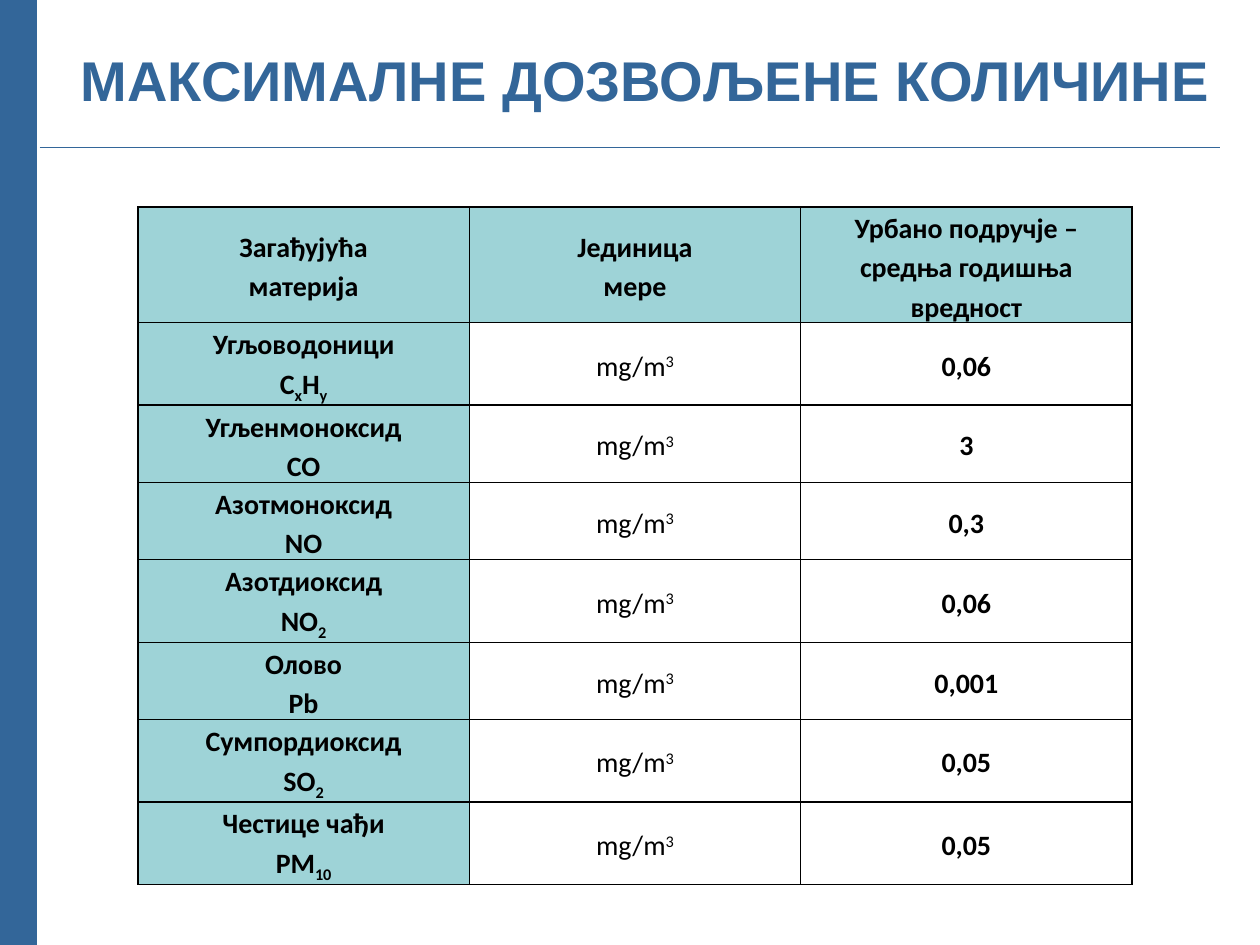
from lxml.etree import SubElement
from pptx import Presentation
from pptx.dml.color import RGBColor
from pptx.enum.text import MSO_ANCHOR, PP_ALIGN
from pptx.oxml.ns import qn
from pptx.util import Cm, Pt

BLUE = RGBColor(0x33, 0x66, 0x99)
TEAL = RGBColor(0x9E, 0xD3, 0xD7)
BLACK = RGBColor(0, 0, 0)

TITLE_FONT = {"name": "Arial", "size": Pt(32), "bold": True}
BOLD_FONT = {"name": "Calibri", "size": Pt(16), "bold": True}
UNIT_FONT = {**BOLD_FONT, "bold": False}
CELL_FORMAT = {
    "vertical_anchor": MSO_ANCHOR.MIDDLE,
    "margin_left": Cm(0.18),
    "margin_right": Cm(0.18),
    "margin_top": 0,
    "margin_bottom": 0,
}
SUBSCRIPT, SUPERSCRIPT = "-25000", "30000"

HEADERS = [
    [["Загађујућа"], ["материја"]],
    [["Јединица"], ["мере"]],
    [["Урбано подручје – средња годишња вредност"]],
]
UNIT = ["mg/m", "3"]
POLLUTANTS = [
    ("Угљоводоници", ["C", "x", "H", "y"], "0,06"),
    ("Угљенмоноксид", ["CO"], "3"),
    ("Азотмоноксид", ["NO"], "0,3"),
    ("Азотдиоксид", ["NO", "2"], "0,06"),
    ("Олово", ["Pb"], "0,001"),
    ("Сумпордиоксид", ["SO", "2"], "0,05"),
    ("Честице чађи", ["PM", "10"], "0,05"),
]


def set_attrs(obj, values):
    for name, value in values.items():
        setattr(obj, name, value)


def add_runs(p, parts, font, color, script=SUBSCRIPT):
    p.alignment = PP_ALIGN.CENTER
    for i, text in enumerate(parts):
        r = p.add_run()
        r.text = text
        set_attrs(r.font, font)
        r.font.color.rgb = color
        if i % 2:
            r.font._element.set("baseline", script)


def add_rule(s, x1, y1, x2, y2, width):
    line = s.shapes.add_connector(1, Cm(x1), Cm(y1), Cm(x2), Cm(y2))
    line.line.color.rgb = BLUE
    line.line.width = Pt(width)
    SubElement(line._element.spPr, qn("a:effectLst"))


def add_frame(s, x, y, w, h):
    add_rule(s, x + 0.05, y, x + 0.05, y + h, 40)
    add_rule(s, x + 0.8, y + 2.98, x + w - 0.8, y + 2.98, 0.75)


def add_title(s, x, y, w, h):
    sp = s.shapes.add_textbox(Cm(x), Cm(y), Cm(w), Cm(h))
    tf = sp.text_frame
    set_attrs(tf, {"word_wrap": True, "vertical_anchor": MSO_ANCHOR.MIDDLE})
    add_runs(tf.paragraphs[0], ["МАКСИМАЛНЕ ДОЗВОЉЕНЕ КОЛИЧИНЕ"], TITLE_FONT, BLUE)


def add_borders(cell):
    tc_pr = cell._tc.get_or_add_tcPr()
    for side in ("lnL", "lnR", "lnT", "lnB"):
        ln = SubElement(tc_pr, qn(f"a:{side}"), w=str(Pt(1)))
        fill = SubElement(ln, qn("a:solidFill"))
        SubElement(fill, qn("a:srgbClr"), val=str(BLACK))


def fill_cell(cell, lines, font=BOLD_FONT, color=None, script=SUBSCRIPT):
    set_attrs(cell, CELL_FORMAT)
    add_borders(cell)
    if color is None:
        cell.fill.background()
    else:
        cell.fill.solid()
        cell.fill.fore_color.rgb = color
    tf = cell.text_frame
    for i, parts in enumerate(lines):
        p = tf.add_paragraph() if i else tf.paragraphs[0]
        p.line_spacing = 1.15
        add_runs(p, parts, font, BLACK, script)


def add_limits_table(s, x, y, w, h):
    rows = len(POLLUTANTS) + 1
    table = s.shapes.add_table(rows, len(HEADERS), Cm(x), Cm(y), Cm(w), Cm(h)).table
    set_attrs(table, {"first_row": False, "horz_banding": False})
    for row in table.rows:
        row.height = Cm(1.55)
    for col, lines in enumerate(HEADERS):
        fill_cell(table.cell(0, col), lines, color=TEAL)
    for row, (name, formula, limit) in enumerate(POLLUTANTS, 1):
        fill_cell(table.cell(row, 0), [[name], formula], color=TEAL)
        fill_cell(table.cell(row, 1), [UNIT], UNIT_FONT, script=SUPERSCRIPT)
        fill_cell(table.cell(row, 2), [[limit]])


def main():
    prs = Presentation()
    set_attrs(prs, {"slide_width": Cm(25.4), "slide_height": Cm(19.05)})
    s = prs.slides.add_slide(prs.slide_layouts[6])
    add_frame(s, 0, 0, 25.4, 19.05)
    add_title(s, 1.2, 0, 23.62, 3.18)
    add_limits_table(s, 2.78, 4.17, 20.04, 13.23)
    prs.save("out.pptx")


if __name__ == "__main__":
    main()
